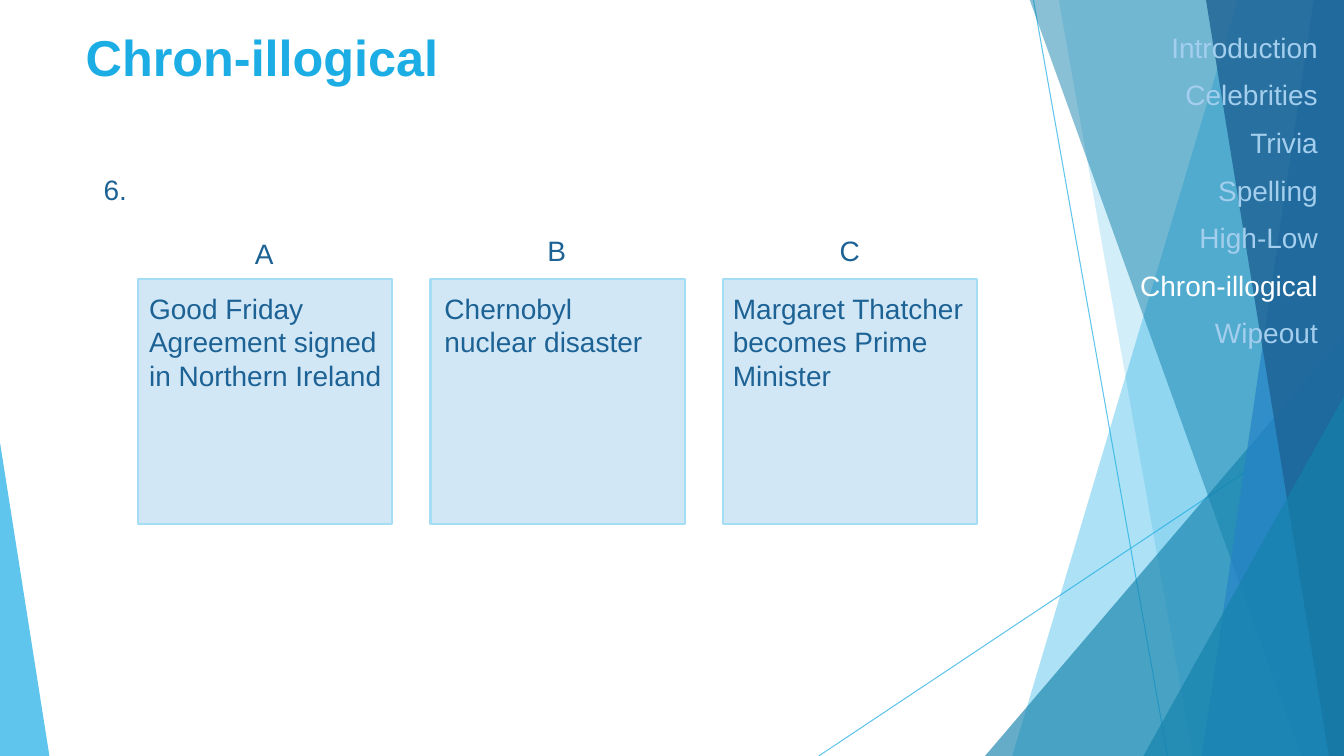
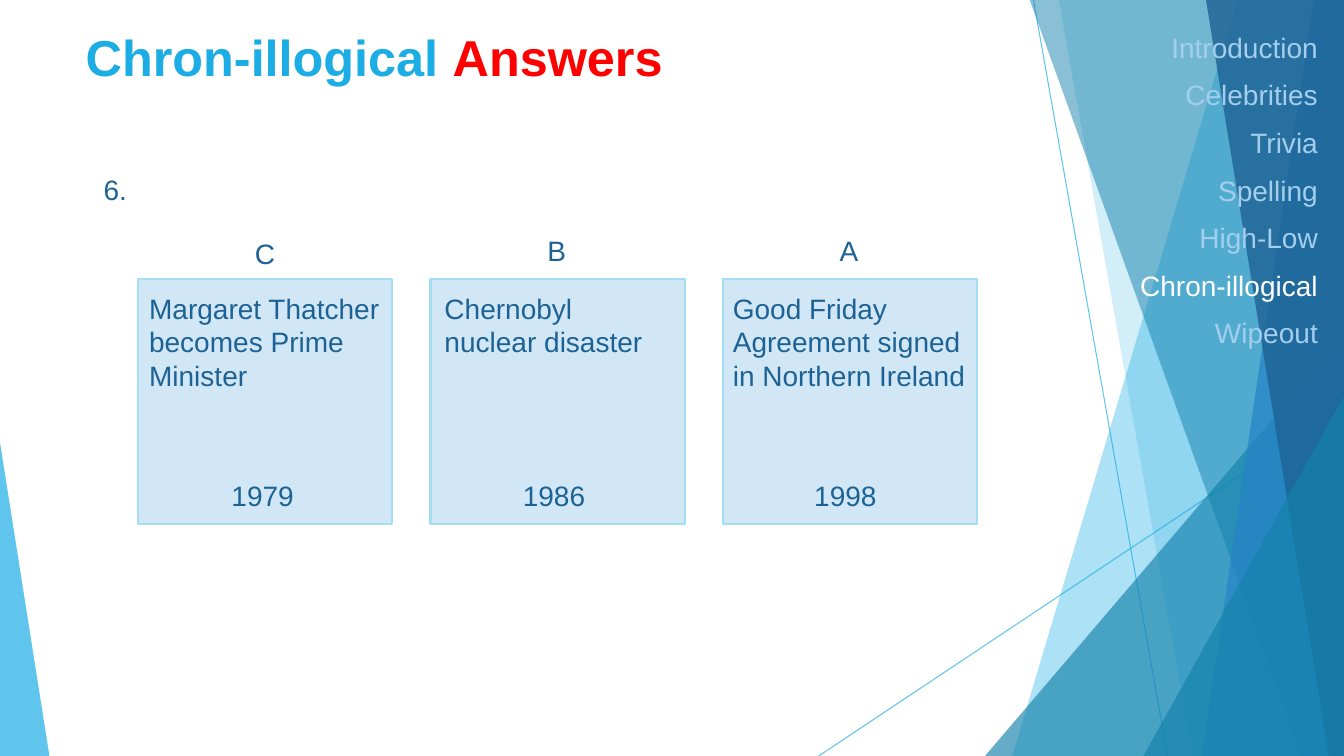
from lxml.etree import SubElement
from pptx import Presentation
from pptx.dml.color import RGBColor
from pptx.enum.shapes import MSO_CONNECTOR, MSO_SHAPE
from pptx.enum.text import MSO_ANCHOR, MSO_AUTO_SIZE, PP_ALIGN
from pptx.oxml.ns import qn
from pptx.util import Inches, Pt

SKY = RGBColor(0x1C, 0xAD, 0xE4)
TEAL = RGBColor(0x14, 0x82, 0xAC)
BLUE = RGBColor(0x26, 0x83, 0xC6)
NAVY = RGBColor(0x1D, 0x62, 0x94)
CARD_FILL = RGBColor(0xD1, 0xE7, 0xF6)
CARD_LINE = RGBColor(0xA4, 0xDE, 0xF4)
MENU_BLUE = RGBColor(0xA3, 0xCE, 0xED)
RED = RGBColor(0xFF, 0x00, 0x00)
WHITE = RGBColor(0xFF, 0xFF, 0xFF)

WIDTH, HEIGHT = 13.33, 7.5
SECTION = "Chron-illogical"
MENU = ["Introduction", "Celebrities", "Trivia", "Spelling", "High-Low", SECTION, "Wipeout"]
COLUMN_STEP = 2.9
LETTER_TOPS = [2.3, 2.27, 2.27]
EVENT_BOXES = [(1.38, 2.52), (4.31, 2.38), (7.17, 2.56)]

EVENTS = {
    "A": (["Good Friday Agreement signed in Northern Ireland"], "1998"),
    "B": (["Chernobyl", "nuclear disaster"], "1986"),
    "C": (["Margaret Thatcher becomes Prime Minister"], "1979"),
}
# Title runs, order of the cards, whether the years show
SLIDES = [
    ([(SECTION, SKY)], "ABC", False),
    ([(SECTION + " ", SKY), ("Answers", RED)], "CBA", True),
]


def write(shape, paragraphs, size=20, bold=False, align=PP_ALIGN.LEFT,
          before=0, wrap=True, fit=MSO_AUTO_SIZE.SHAPE_TO_FIT_TEXT):
    """Fill a shape with paragraphs, each a list of (text, colour) runs."""
    frame = shape.text_frame
    frame.word_wrap = wrap
    frame.auto_size = fit
    frame.vertical_anchor = MSO_ANCHOR.TOP
    for index, runs in enumerate(paragraphs):
        paragraph = frame.add_paragraph() if index else frame.paragraphs[0]
        paragraph.alignment = align
        paragraph.space_before = Pt(before)
        for text, color in runs:
            run = paragraph.add_run()
            run.text = text
            run.font.name = "Arial"
            run.font.size = Pt(size)
            run.font.bold = bold
            run.font.color.rgb = color


def set_opacity(shape, percent):
    color = shape.element.xpath(".//a:srgbClr")[0]
    SubElement(color, qn("a:alpha"), val=str(percent * 1000))


presentation = Presentation()
presentation.slide_width = Inches(WIDTH)
presentation.slide_height = Inches(HEIGHT)
layout = presentation.slide_layouts[5]

# Shared title position
layout_title = layout.placeholders[0]
layout_title.left, layout_title.top = Inches(0.75), Inches(0.21)
layout_title.width, layout_title.height = Inches(11.37), Inches(1.26)

slides = [presentation.slides.add_slide(layout) for _ in SLIDES]

# Shared decoration, drawn once and moved to the layout
decoration = slides[0].shapes.add_group_shape()
for start_x, start_y, end_x in [(10.25, 0, 11.58), (WIDTH, 4.03, 8.12)]:
    line = decoration.shapes.add_connector(
        MSO_CONNECTOR.STRAIGHT, Inches(start_x), Inches(start_y), Inches(end_x), Inches(HEIGHT))
    line.line.color.rgb = SKY
    line.line.width = Pt(0.75)
    set_opacity(line, 70)
    SubElement(line.element.spPr, qn("a:effectLst"))

# Panels give top and bottom x of the slanted edge; triangles give left, top, width, tip
facets = [
    ((12.28, 10.04), SKY, 36),
    ((10.5, 11.83), SKY, 20),
    ((9.77, 3.33, 3.56, 1), TEAL, 66),
    ((10.21, 12.91), TEAL, 50),
    ((13.03, 11.92), BLUE, 70),
    ((11.96, 13.18), NAVY, 80),
    ((11.34, 3.93, 1.99, 1), TEAL, 66),
    ((0, 4.39, 0.49, 0), SKY, 70),
]
for outline, color, opacity in facets:
    if len(outline) == 2:
        top_x, bottom_x = outline
        builder = decoration.shapes.build_freeform(Inches(top_x), Inches(-0.01))
        corners = [(WIDTH, -0.01), (WIDTH, HEIGHT), (bottom_x, HEIGHT)]
        builder.add_line_segments([(Inches(x), Inches(y)) for x, y in corners], close=True)
        facet = builder.convert_to_shape()
    else:
        left, top, width, tip = outline
        facet = decoration.shapes.add_shape(
            MSO_SHAPE.ISOSCELES_TRIANGLE,
            Inches(left), Inches(top), Inches(width), Inches(HEIGHT - top))
        facet.adjustments[0] = tip
    facet.shadow.inherit = False
    facet.fill.solid()
    facet.fill.fore_color.rgb = color
    facet.line.fill.background()
    set_opacity(facet, opacity)

layout.shapes.element.insert(2, decoration.element)
for number, properties in enumerate(decoration.element.xpath(".//p:cNvPr"), 101):
    properties.set("id", str(number))

for slide, (title_runs, order, show_years) in zip(slides, SLIDES):
    shapes = slide.shapes
    write(shapes.title, [title_runs], size=36, bold=True, fit=MSO_AUTO_SIZE.NONE)

    # Question number
    question = shapes.add_textbox(Inches(0.93), Inches(1.66), Inches(0.44), Inches(0.44))
    write(question, [[("6.", NAVY)]], wrap=False)

    # Event cards
    for column, letter in enumerate(order):
        event, year = EVENTS[letter]
        shift = column * COLUMN_STEP
        card = shapes.add_shape(
            MSO_SHAPE.RECTANGLE, Inches(1.37 + shift), Inches(2.77), Inches(2.52), Inches(2.43))
        card.shadow.inherit = False
        card.fill.solid()
        card.fill.fore_color.rgb = CARD_FILL
        card.line.color.rgb = CARD_LINE
        card.line.width = Pt(1.5)

        label = shapes.add_textbox(
            Inches(2.43 + shift), Inches(LETTER_TOPS[column]), Inches(0.4), Inches(0.44))
        write(label, [[(letter, NAVY)]], wrap=False)

        left, width = EVENT_BOXES[column]
        description = shapes.add_textbox(Inches(left), Inches(2.84), Inches(width), Inches(1.11))
        write(description, [[(text, NAVY)] for text in event])

        if show_years:
            year_box = shapes.add_textbox(
                Inches(2.19 + column * 2.89), Inches(4.7), Inches(0.83), Inches(0.44))
            write(year_box, [[(year, NAVY)]], align=PP_ALIGN.CENTER, wrap=False)

    # Section menu
    menu = shapes.add_textbox(Inches(10.56), Inches(0.25), Inches(2.61), Inches(4.52))
    write(menu, [[(name, WHITE if name == SECTION else MENU_BLUE)] for name in MENU],
          align=PP_ALIGN.RIGHT, before=10, fit=MSO_AUTO_SIZE.NONE)

presentation.save("out.pptx")
